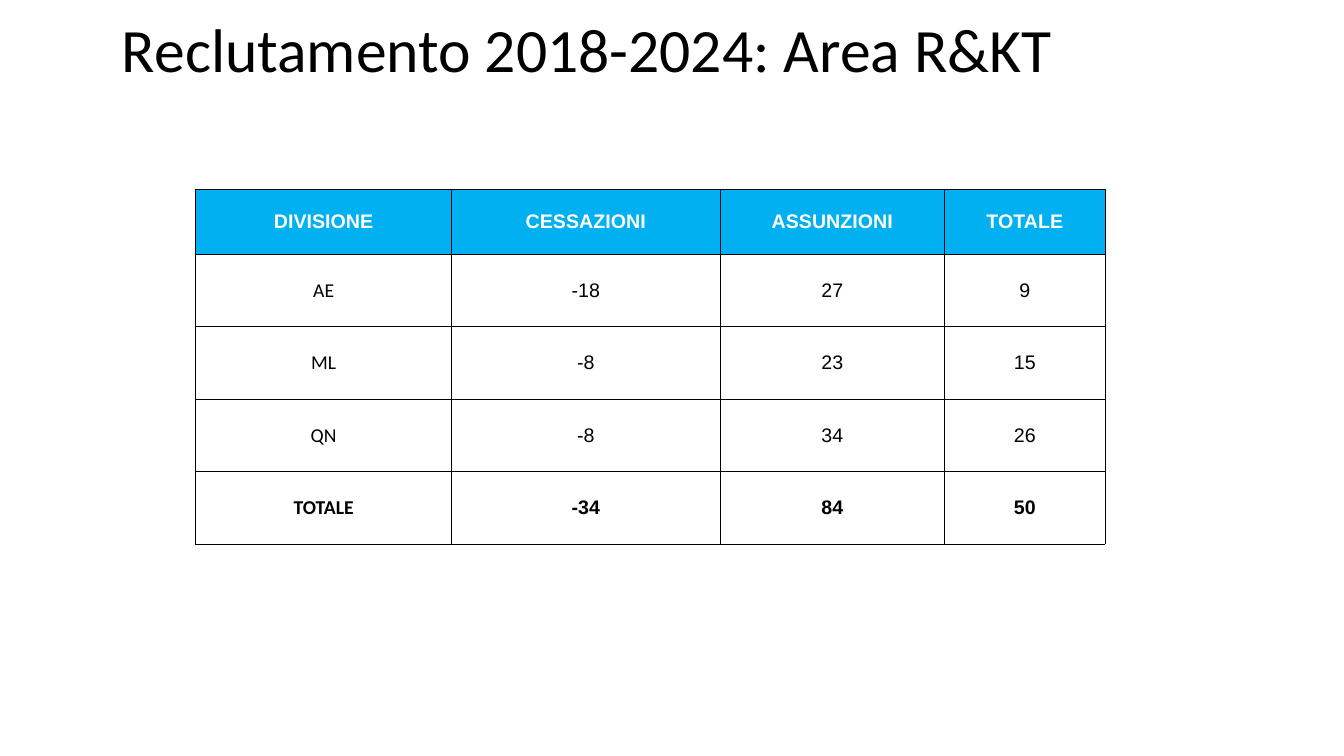
from lxml.etree import SubElement
from pptx import Presentation
from pptx.dml.color import RGBColor
from pptx.enum.text import MSO_ANCHOR as Anchor, MSO_AUTO_SIZE as AutoSize, PP_ALIGN as Align
from pptx.oxml.ns import qn
from pptx.util import Inches, Pt

TITLE_LAYOUT = 5
COLUMN_WIDTHS = [2.54, 2.66, 2.23, 1.59]
ROW_HEIGHTS = [0.64] + [0.72] * 4
RECRUITMENT = [
    ["DIVISIONE", "CESSAZIONI", "ASSUNZIONI", "TOTALE"],
    ["AE", "-18", "27", "9"],
    ["ML", "-8", "23", "15"],
    ["QN", "-8", "34", "26"],
    ["TOTALE", "-34", "84", "50"],
]


def color(hex_value):
    return RGBColor.from_string(hex_value)


class RecruitmentSlide:
    black, white, header_blue = "000000", "FFFFFF", "00B0F0"
    label_font, value_font = "Calibri", "Arial"

    def __init__(self, presentation):
        layout = presentation.slide_layouts[TITLE_LAYOUT]
        self.slide = presentation.slides.add_slide(layout)

    def format_text(self, paragraph, font_name, size, text_color, bold=False, align=Align.LEFT):
        paragraph.alignment = align
        for run in paragraph.runs:
            run.font.name = font_name
            run.font.size = Pt(size)
            run.font.bold = bold
            run.font.color.rgb = color(text_color)

    def title(self, text, left, top, width, height):
        heading = self.slide.shapes.title
        heading.left, heading.top = Inches(left), Inches(top)
        heading.width, heading.height = Inches(width), Inches(height)
        frame = heading.text_frame
        frame.text = text
        frame.word_wrap = True
        frame.auto_size = AutoSize.NONE
        frame.vertical_anchor = Anchor.MIDDLE
        frame.paragraphs[0].line_spacing = 0.9
        self.format_text(frame.paragraphs[0], self.label_font, 44, self.black)

    def border(self, cell, width=0.5):
        """Draw a solid line on all four sides; call before setting the fill."""
        properties = cell._tc.get_or_add_tcPr()
        for side in ("a:lnL", "a:lnR", "a:lnT", "a:lnB"):
            line = SubElement(properties, qn(side), w=str(Pt(width)))
            fill = SubElement(line, qn("a:solidFill"))
            SubElement(fill, qn("a:srgbClr"), val=self.black)

    def cell(self, cell, text, is_header, is_label, bold):
        cell.text = text
        cell.vertical_anchor = Anchor.MIDDLE
        cell.margin_left = cell.margin_right = cell.margin_top = cell.margin_bottom = 0
        self.border(cell)
        if is_header:
            cell.fill.solid()
            cell.fill.fore_color.rgb = color(self.header_blue)
        else:
            cell.fill.background()
        self.format_text(
            cell.text_frame.paragraphs[0],
            self.label_font if is_label and not is_header else self.value_font,
            14,
            self.white if is_header else self.black,
            bold,
            Align.CENTER,
        )

    def table(self, rows, left, top, widths, heights):
        table = self.slide.shapes.add_table(
            len(rows), len(widths), Inches(left), Inches(top),
            Inches(sum(widths)), Inches(sum(heights)),
        ).table
        table.horz_banding = False
        for column, width in zip(table.columns, widths):
            column.width = Inches(width)
        for row, height in zip(table.rows, heights):
            row.height = Inches(height)
        last = len(rows) - 1
        for r, values in enumerate(rows):
            for c, value in enumerate(values):
                self.cell(table.cell(r, c), value, r == 0, c == 0, r in (0, last))


def main():
    presentation = Presentation()
    presentation.slide_width = Inches(13.33)
    presentation.slide_height = Inches(7.5)
    recruitment = RecruitmentSlide(presentation)
    recruitment.title("Reclutamento 2018-2024: Area R&KT", 1.11, -0.2, 11.5, 1.45)
    recruitment.table(RECRUITMENT, 1.94, 1.88, COLUMN_WIDTHS, ROW_HEIGHTS)
    presentation.save("out.pptx")


if __name__ == "__main__":
    main()
